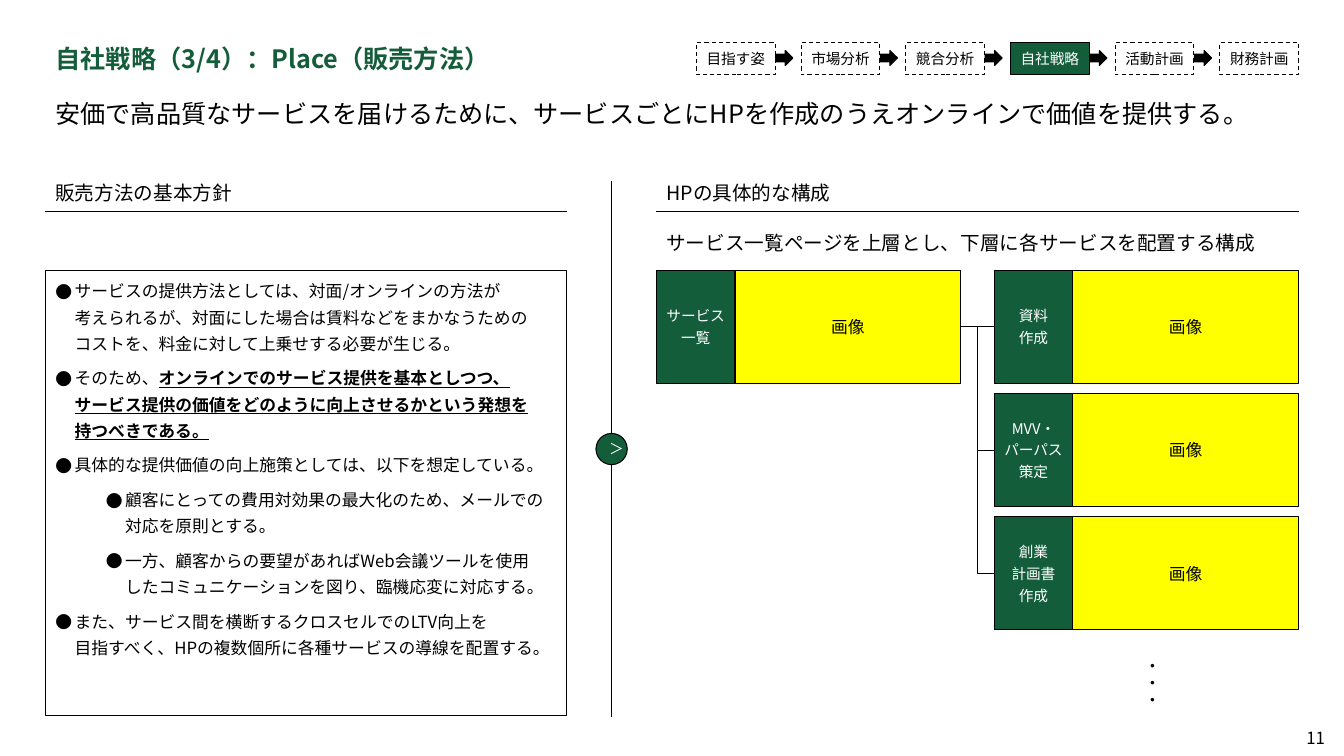
from copy import deepcopy
from dataclasses import dataclass

from pptx import Presentation
from pptx.dml.color import RGBColor
from pptx.enum.dml import MSO_LINE
from pptx.enum.shapes import MSO_CONNECTOR, MSO_SHAPE
from pptx.enum.text import MSO_ANCHOR, MSO_AUTO_SIZE, PP_ALIGN
from pptx.oxml.xmlchemy import OxmlElement
from pptx.util import Inches, Pt

RECTANGLE, OVAL, ARROW = MSO_SHAPE.RECTANGLE, MSO_SHAPE.OVAL, MSO_SHAPE.RIGHT_ARROW
STRAIGHT, ELBOW = MSO_CONNECTOR.STRAIGHT, MSO_CONNECTOR.ELBOW
LEFT, CENTER = PP_ALIGN.LEFT, PP_ALIGN.CENTER
TOP, MIDDLE = MSO_ANCHOR.TOP, MSO_ANCHOR.MIDDLE
RIGHT_SITE, LEFT_SITE = 3, 1

FONT = "Noto Sans CJK JP"
GREEN, YELLOW, BLACK, WHITE = "145D3A", "FFFF00", "000000", "FFFFFF"
SLIDE_WIDTH, SLIDE_HEIGHT = Inches(13.33), Inches(7.5)

# Positions are percentages of the slide's width and height.
MARGIN, CONTENT_WIDTH = 3.38, 93.24
POLICY_WIDTH = 38.79
SITE_LEFT, SITE_WIDTH = 48.84, 47.78
HEADING_TOP, RULE_TOP, CARD_TOP = 24, 28, 35.73
LABEL_WIDTH, IMAGE_WIDTH = 5.85, 16.8
CARD_HEIGHT, CARD_PITCH = 14.95, 16.33
CHILD_LEFT = MARGIN + CONTENT_WIDTH - LABEL_WIDTH - IMAGE_WIDTH
STEP_LEFT, STEP_PITCH, STEP_WIDTH = 51.82, 7.79, 5.85
STEPS = ["目指す姿", "市場分析", "競合分析", "自社戦略", "活動計画", "財務計画"]
CURRENT_STEP = "自社戦略"


@dataclass
class Area:
    left: float
    top: float
    width: float
    height: float

    def lengths(self):
        return (across(self.left), down(self.top), across(self.width), down(self.height))


@dataclass
class Bullet:
    text: str
    emphasis: str = ""
    level: int = 0


@dataclass
class Card:
    label: str
    left: float
    row: int


BULLETS = [
    Bullet("サービスの提供方法としては、対面/オンラインの方法が\n"
           "考えられるが、対面にした場合は賃料などをまかなうための\n"
           "コストを、料金に対して上乗せする必要が生じる。"),
    Bullet("そのため、",
           "オンラインでのサービス提供を基本としつつ、\n"
           "サービス提供の価値をどのように向上させるかという発想を\n持つべきである。"),
    Bullet("具体的な提供価値の向上施策としては、以下を想定している。"),
    Bullet("顧客にとっての費用対効果の最大化のため、メールでの\n対応を原則とする。", level=1),
    Bullet("一方、顧客からの要望があればWeb会議ツールを使用\n"
           "したコミュニケーションを図り、臨機応変に対応する。", level=1),
    Bullet("また、サービス間を横断するクロスセルでのLTV向上を\n"
           "目指すべく、HPの複数個所に各種サービスの導線を配置する。"),
]
PARENT_CARD = Card("サービス\n一覧", SITE_LEFT, 0)
CHILD_CARDS = [
    Card(label, CHILD_LEFT, row)
    for row, label in enumerate(["資料\n作成", "MVV・\nパーパス\n策定", "創業\n計画書\n作成"])
]


def across(share: float) -> int:
    return round(SLIDE_WIDTH * share / 100)


def down(share: float) -> int:
    return round(SLIDE_HEIGHT * share / 100)


def color(value: str) -> RGBColor:
    return RGBColor.from_string(value)


def add_text(paragraph, text: str, size=12, fill=BLACK, bold=False, underline=False):
    """Add formatted runs, with a line break at each newline."""
    for index, line in enumerate(text.split("\n")):
        if index:
            paragraph.add_line_break()
            paragraph._p[-1].append(deepcopy(run.font._element))
        run = paragraph.add_run()
        run.text = line
        run.font.size, run.font.bold, run.font.underline = Pt(size), bold, underline
        run.font.color.rgb = color(fill)
        run.font.name = FONT
        east_asian = OxmlElement("a:ea")
        east_asian.set("typeface", FONT)
        run.font._element.append(east_asian)


def write(shape, text: str, align=LEFT, anchor=MIDDLE, wrap=False, insets=(0.1, 0.05, 0.1, 0.05),
          space=0, **text_format):
    """Fill a shape with one paragraph for each line of the text."""
    frame = shape.text_frame
    frame.auto_size, frame.word_wrap = MSO_AUTO_SIZE.NONE, wrap
    frame.vertical_anchor = anchor
    frame.margin_left, frame.margin_top, frame.margin_right, frame.margin_bottom = map(Inches, insets)
    for index, line in enumerate(text.split("\n")):
        paragraph = frame.add_paragraph() if index else frame.paragraphs[0]
        paragraph.alignment = align
        paragraph.space_before = Pt(space if index else 0)
        add_text(paragraph, line, **text_format)


def add_text_box(slide, area: Area, text: str, **text_format):
    box = slide.shapes.add_textbox(*area.lengths())
    write(box, text, **text_format)
    return box


def add_shape(slide, kind, area: Area, fill: str = "", dashed=False):
    shape = slide.shapes.add_shape(kind, *area.lengths())
    shape.shadow.inherit = False
    if fill:
        shape.fill.solid()
        shape.fill.fore_color.rgb = color(fill)
    else:
        shape.fill.background()
    shape.line.color.rgb, shape.line.width = color(BLACK), Pt(0.75)
    if dashed:
        shape.line.dash_style = MSO_LINE.DASH
    return shape


def add_line(slide, left=0.0, top=0.0, right=0.0, bottom=0.0, kind=STRAIGHT):
    line = slide.shapes.add_connector(kind, across(left), down(top), across(right), down(bottom))
    line.line.color.rgb, line.line.width = color(BLACK), Pt(0.75)
    line.element.spPr.append(OxmlElement("a:effectLst"))
    return line


def add_steps(slide):
    for index, step in enumerate(STEPS):
        left = STEP_LEFT + index * STEP_PITCH
        current = step == CURRENT_STEP
        box = add_shape(slide, RECTANGLE, Area(left, 5.6, STEP_WIDTH, 4.27),
                        GREEN if current else "", dashed=not current)
        write(box, step, align=CENTER, size=10.5, fill=WHITE if current else BLACK)
        if index < len(STEPS) - 1:
            add_shape(slide, ARROW, Area(left + 5.89, 6.67, 1.28, 2), BLACK)


def add_card(slide, card: Card):
    """Draw a label beside its image area and return both shapes."""
    top = CARD_TOP + card.row * CARD_PITCH
    label = add_shape(slide, RECTANGLE, Area(card.left, top, LABEL_WIDTH, CARD_HEIGHT), GREEN)
    write(label, card.label, align=CENTER, space=3, size=10.5, fill=WHITE)
    image_area = Area(card.left + LABEL_WIDTH, top, IMAGE_WIDTH, CARD_HEIGHT)
    image = add_shape(slide, RECTANGLE, image_area, YELLOW)
    write(image, "画像", align=CENTER)
    return label, image


def add_site_map(slide):
    _, parent_image = add_card(slide, PARENT_CARD)
    for card in CHILD_CARDS:
        label, _ = add_card(slide, card)
        link = add_line(slide, kind=ELBOW if card.row else STRAIGHT)
        link.begin_connect(parent_image, RIGHT_SITE)
        link.end_connect(label, LEFT_SITE)
    dots = add_text_box(slide, Area(81.77, 85.73, 7.88, 6.67), "・・・", align=CENTER)
    dots.element.txBody.bodyPr.set("vert", "eaVert")


def fill_policy(body):
    body.left, body.top, body.width, body.height = Area(MARGIN, CARD_TOP, POLICY_WIDTH, 58.93).lengths()
    body.line.color.rgb, body.line.width = color(BLACK), Pt(0.75)
    frame = body.text_frame
    frame.auto_size, frame.word_wrap, frame.vertical_anchor = MSO_AUTO_SIZE.NONE, True, TOP
    for index, bullet in enumerate(BULLETS):
        paragraph = frame.add_paragraph() if index else frame.paragraphs[0]
        paragraph.level, paragraph.alignment = bullet.level, LEFT
        paragraph.line_spacing, paragraph.space_before = 1.3, Pt(6 if index else 0)
        properties = paragraph._p.get_or_add_pPr()
        properties.set("marL", str(Inches(0.19 + 0.5 * bullet.level)))
        properties.set("indent", str(Inches(-0.19)))
        for tag, name, value in (("a:buFont", "typeface", FONT), ("a:buChar", "char", "●")):
            element = OxmlElement(tag)
            element.set(name, value)
            properties.append(element)
        add_text(paragraph, bullet.text)
        if bullet.emphasis:
            add_text(paragraph, bullet.emphasis, bold=True, underline=True)


def main():
    presentation = Presentation()
    presentation.slide_width, presentation.slide_height = SLIDE_WIDTH, SLIDE_HEIGHT
    slide = presentation.slides.add_slide(presentation.slide_layouts[1])
    title, body = slide.placeholders
    title.left, title.top, title.width, title.height = Area(MARGIN, 4.27, CONTENT_WIDTH, 6.8).lengths()
    write(title, "自社戦略（3/4）：Place（販売方法）", wrap=True, size=18, fill=GREEN, bold=True)
    add_steps(slide)
    add_text_box(slide, Area(MARGIN, 12.4, CONTENT_WIDTH, 6.8),
                 "安価で高品質なサービスを届けるために、サービスごとにHPを作成のうえオンラインで価値を提供する。",
                 anchor=TOP, wrap=True, size=18)
    fill_policy(body)
    for left, width, heading in ((MARGIN, POLICY_WIDTH, "販売方法の基本方針"),
                                 (SITE_LEFT, SITE_WIDTH, "HPの具体的な構成")):
        add_text_box(slide, Area(left, HEADING_TOP, width, 2.93), heading, size=14)
        add_line(slide, left, RULE_TOP, left + width, RULE_TOP)
    add_text_box(slide, Area(SITE_LEFT, 29.87, SITE_WIDTH, 4.4),
                 "サービス一覧ページを上層とし、下層に各サービスを配置する構成", size=14)
    add_line(slide, 45.5, 94.8, 45.5, HEADING_TOP)
    circle = add_shape(slide, OVAL, Area(44.34, 57.33, 2.33, 4.13), GREEN)
    write(circle, "＞", align=CENTER, insets=(0.1, 0, 0, 0), size=10.5, fill=WHITE)
    add_site_map(slide)
    add_text_box(slide, Area(96.77, 96, 2.25, 3.2), "11", align=CENTER)
    presentation.save("out.pptx")


if __name__ == "__main__":
    main()
